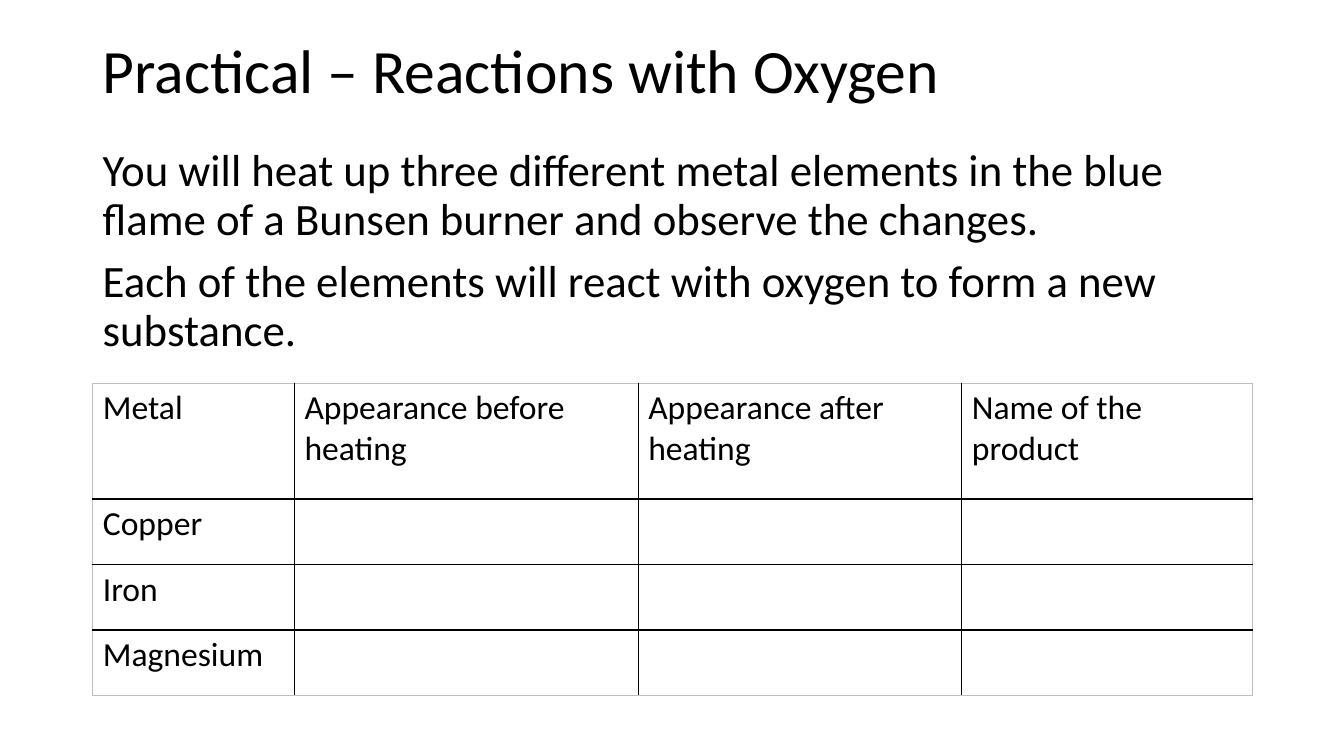
from lxml.etree import SubElement
from pptx import Presentation
from pptx.dml.color import RGBColor
from pptx.enum.text import MSO_ANCHOR, PP_ALIGN
from pptx.oxml.ns import qn
from pptx.util import Inches, Pt

TITLE = "Practical – Reactions with Oxygen"
BODY = [
    "You will heat up three different metal elements in the blue flame of a "
    "Bunsen burner and observe the changes.",
    "Each of the elements will react with oxygen to form a new substance.",
]
HEADER = ["Metal", "Appearance before heating", "Appearance after heating",
          "Name of the product"]
METALS = ["Copper", "Iron", "Magnesium"]

COLORS = {"text": "000000", "inner": "000000", "outer": "BFBFBF"}
FONT = "Calibri"
LEFT, WIDTH = 0.92, 11.5
TITLE_BOX = (LEFT, 0, WIDTH, 1.45)
BODY_BOX = (LEFT, 1.42, WIDTH, 4.76)
TABLE_TOP = 3.8
COL_WIDTHS = [2, 3.41, 3.21, 2.88]
ROW_HEIGHTS = [1.15] + [0.65] * len(METALS)


def set_text(p, text, size, **layout):
    for name, value in {"alignment": PP_ALIGN.LEFT, **layout}.items():
        setattr(p, name, value)
    r = p.add_run()
    r.text = text
    for name, value in {"name": FONT, "size": Pt(size), "bold": False}.items():
        setattr(r.font, name, value)
    r.font.color.rgb = RGBColor.from_string(COLORS["text"])


def set_borders(cell, outer_sides):
    """Draw black inner lines and thin grey lines on the table's outer sides."""
    tcPr = cell._tc.get_or_add_tcPr()
    for i, side in enumerate("LRTB"):
        kind, width = ("outer", 0.5) if side in outer_sides else ("inner", 1)
        ln = SubElement(tcPr, qn(f"a:ln{side}"), w=str(Pt(width)))
        fill = SubElement(ln, qn("a:solidFill"))
        SubElement(fill, qn("a:srgbClr"), val=COLORS[kind])


def add_title(s):
    sp = s.shapes.title
    sp.left, sp.top, sp.width, sp.height = map(Inches, TITLE_BOX)
    tf = sp.text_frame
    tf.word_wrap = True
    tf.vertical_anchor = MSO_ANCHOR.MIDDLE
    set_text(tf.paragraphs[0], TITLE, 44, line_spacing=0.9)


def add_body(s):
    tf = s.shapes.add_textbox(*map(Inches, BODY_BOX)).text_frame
    tf.word_wrap = True
    for i, text in enumerate(BODY):
        p = tf.add_paragraph() if i else tf.paragraphs[0]
        set_text(p, text, 32, line_spacing=0.9, space_before=Pt(10 if i else 0))


def add_results_table(s):
    rows, cols = len(ROW_HEIGHTS), len(COL_WIDTHS)
    table = s.shapes.add_table(rows, cols, Inches(LEFT), Inches(TABLE_TOP),
                               Inches(WIDTH), Inches(sum(ROW_HEIGHTS))).table
    table.first_row = table.horz_banding = False
    for column, width in zip(table.columns, COL_WIDTHS):
        column.width = Inches(width)
    for row, height in zip(table.rows, ROW_HEIGHTS):
        row.height = Inches(height)

    content = [HEADER] + [[metal] + [""] * (cols - 1) for metal in METALS]
    for i, values in enumerate(content):
        for j, text in enumerate(values):
            cell = table.cell(i, j)
            edges = {"L": j == 0, "R": j == cols - 1,
                     "T": i == 0, "B": i == rows - 1}
            set_borders(cell, [side for side, outer in edges.items() if outer])
            cell.fill.background()
            if text:
                set_text(cell.text_frame.paragraphs[0], text, 24)


def main():
    prs = Presentation()
    prs.slide_width, prs.slide_height = Inches(13.33), Inches(7.5)
    s = prs.slides.add_slide(prs.slide_layouts[5])
    add_title(s)
    add_body(s)
    add_results_table(s)
    prs.save("out.pptx")


if __name__ == "__main__":
    main()
